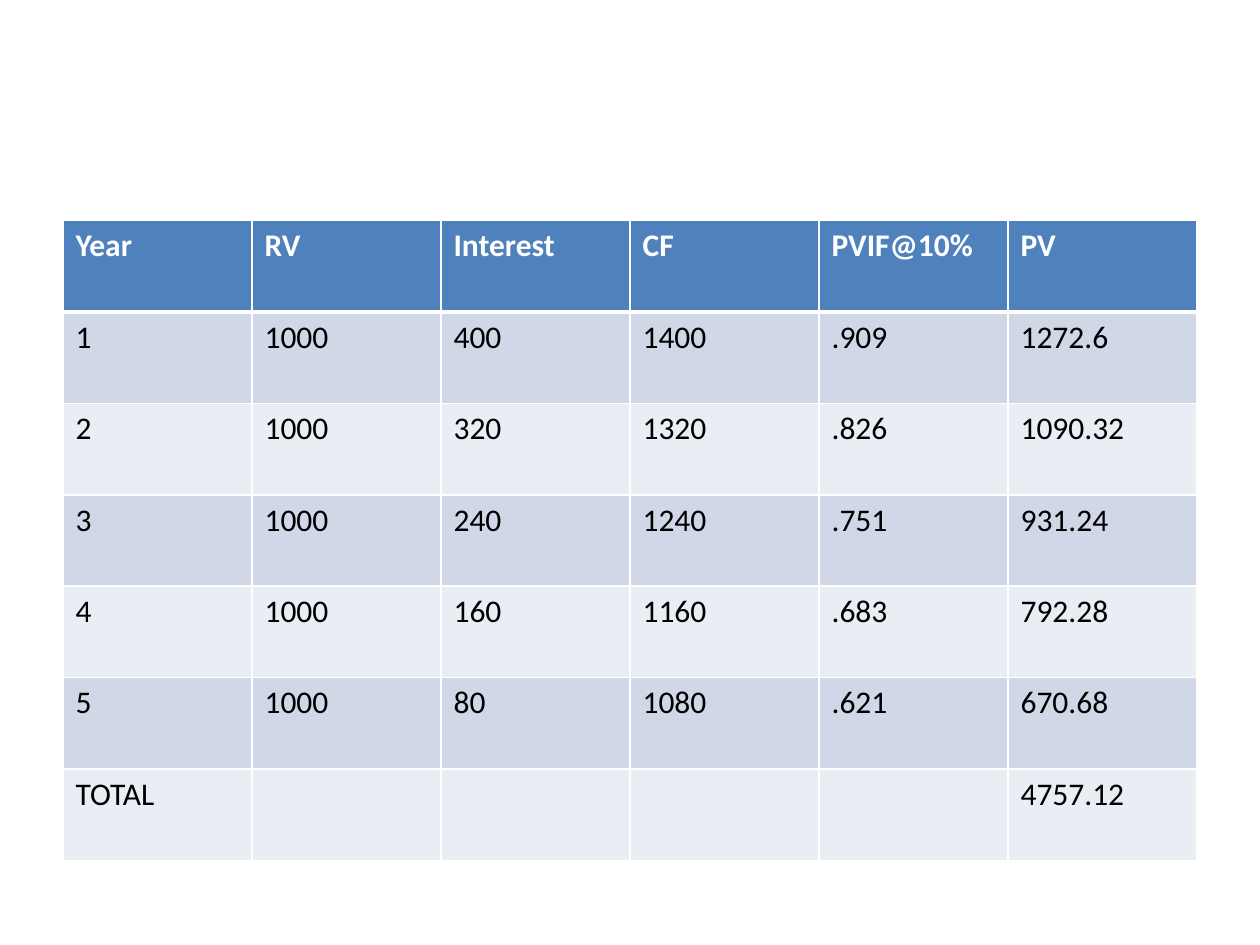
from lxml import etree
from pptx import Presentation
from pptx.dml.color import RGBColor
from pptx.oxml.ns import qn
from pptx.util import Inches, Pt

HEADER = ["Year", "RV", "Interest", "CF", "PVIF@10%", "PV"]
YEARS = [
    ["1", "1000", "400", "1400", ".909", "1272.6"],
    ["2", "1000", "320", "1320", ".826", "1090.32"],
    ["3", "1000", "240", "1240", ".751", "931.24"],
    ["4", "1000", "160", "1160", ".683", "792.28"],
    ["5", "1000", "80", "1080", ".621", "670.68"],
]
TOTAL = ["TOTAL", "", "", "", "", "4757.12"]
ROWS = [HEADER, *YEARS, TOTAL]

HEADER_FILL = "4F81BD"
BAND_FILLS = ["E9EDF4", "D0D8E8"]
WHITE, BLACK = "FFFFFF", "000000"
THIN, THICK = 1, 3


def rgb(value):
    return RGBColor.from_string(value)


def add_border(cell, side, points):
    line = etree.SubElement(cell._tc.get_or_add_tcPr(), qn(f"a:ln{side}"), w=str(Pt(points)))
    fill = etree.SubElement(line, qn("a:solidFill"))
    etree.SubElement(fill, qn("a:srgbClr"), val=WHITE)


prs = Presentation()
prs.slide_width, prs.slide_height = Inches(10), Inches(7.5)
slide = prs.slides.add_slide(prs.slide_layouts[6])

# Table grid: equal columns and rows
left, top = Inches(0.5), Inches(1.75)
width, height = prs.slide_width - 2 * left, Inches(5.08)
schedule = slide.shapes.add_table(len(ROWS), len(HEADER), left, top, width, height).table

for r, row in enumerate(ROWS):
    is_header = r == 0
    for c, entry in enumerate(row):
        cell = schedule.cell(r, c)

        # Borders come before the fill; a thick rule sits under the header
        widths = {"L": THIN, "R": THIN,
                  "T": THICK if r == 1 else THIN,
                  "B": THICK if is_header else THIN}
        for side, points in widths.items():
            add_border(cell, side, points)
        cell.fill.solid()
        cell.fill.fore_color.rgb = rgb(HEADER_FILL if is_header else BAND_FILLS[r % 2])

        # Text
        if entry:
            cell.text = entry
            font = cell.text_frame.paragraphs[0].font
            font.name, font.size, font.bold = "Calibri", Pt(18), is_header
            font.color.rgb = rgb(WHITE if is_header else BLACK)

prs.save("out.pptx")
